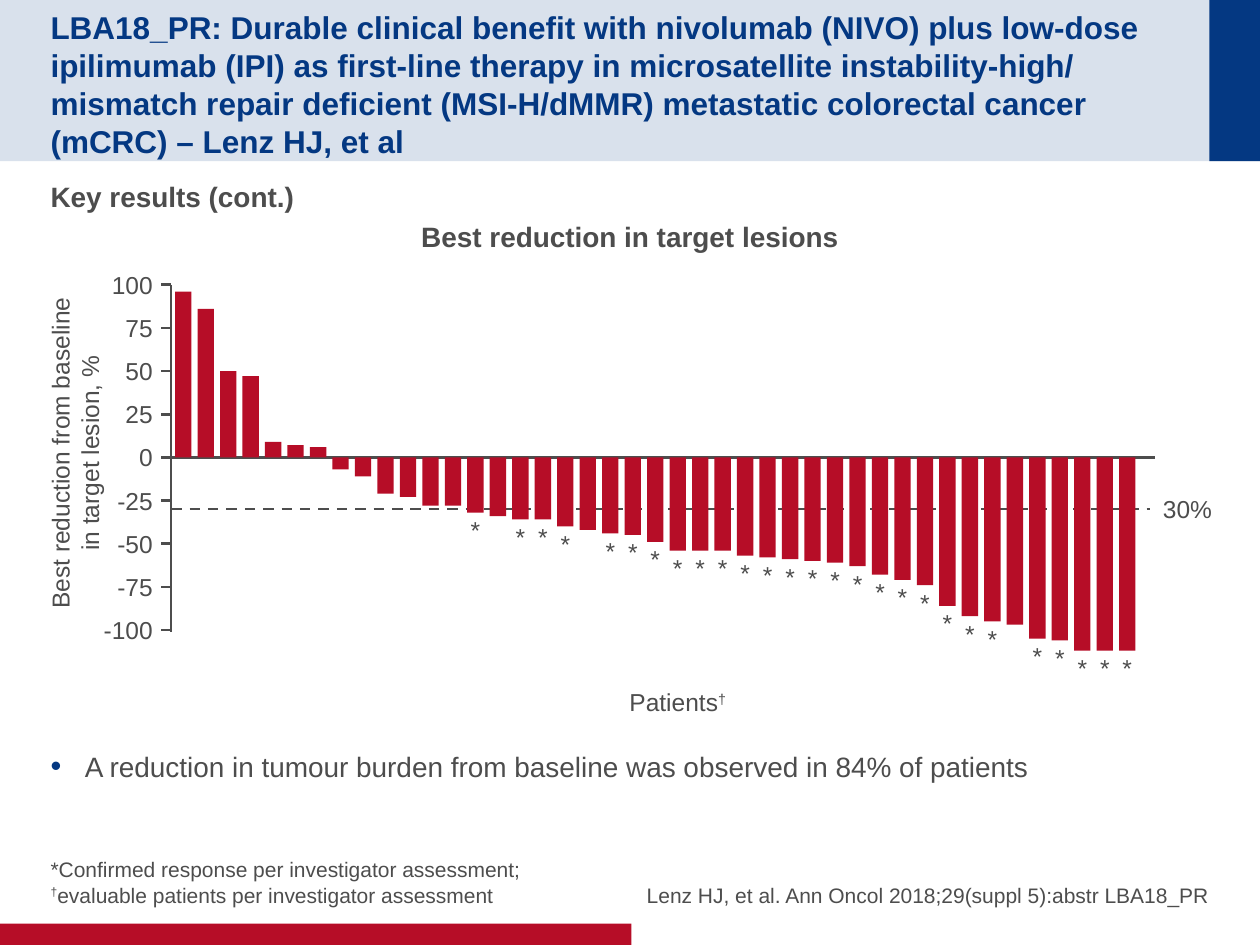
from lxml.etree import SubElement
from pptx import Presentation
from pptx.dml.color import RGBColor
from pptx.enum.dml import MSO_LINE
from pptx.enum.shapes import MSO_CONNECTOR, MSO_SHAPE
from pptx.enum.text import MSO_ANCHOR, PP_ALIGN
from pptx.oxml.ns import qn
from pptx.util import Cm, Pt

NAVY, RED, GREY = "043882", "B60D27", "4D4D4D"

ZERO_Y = 9.22           # height of the zero line
CM_PER_PERCENT = 0.0348
AXIS_X, TICK_LENGTH = 3.45, 0.2
FIRST_BAR_X, LAST_BAR_X, BAR_WIDTH = 3.53, 22.56, 0.33
LABEL_HEIGHT, STAR_WIDTH = 0.86, 0.71

CHANGES = [
    96, 86, 50, 47, 9, 7, 6, -7, -11, -21, -23, -28, -28, -32, -34,
    -36, -36, -40, -42, -44, -45, -49, -54, -54, -54, -57, -58, -59, -60,
    -61, -63, -68, -71, -74, -86, -92, -95, -97, -105, -106, -112, -112, -112,
]
FIRST_CONFIRMED, UNCONFIRMED = 13, {14, 18, 37}


def color(code):
    return RGBColor.from_string(code)


def level(percent):
    """Vertical position of a percentage on the chart."""
    return ZERO_Y - percent * CM_PER_PERCENT


class SlideBuilder:
    font = "Arial"

    def __init__(self, page):
        self.page = page

    def rect(self, left, top, width, height, fill, opacity=None, shapes=None):
        shapes = shapes or self.page.shapes
        shape = shapes.add_shape(
            MSO_SHAPE.RECTANGLE, Cm(left), Cm(top), Cm(width), Cm(height))
        shape.shadow.inherit = False
        shape.fill.solid()
        shape.fill.fore_color.rgb = color(fill)
        shape.line.fill.background()
        if opacity:
            tint = shape.fill._xPr.find(".//" + qn("a:srgbClr"))
            SubElement(tint, qn("a:alpha"), val=str(opacity * 1000))

    def line(self, x1, y1, x2, y2, dash=None):
        line = self.page.shapes.add_connector(
            MSO_CONNECTOR.STRAIGHT, Cm(x1), Cm(y1), Cm(x2), Cm(y2))
        line.line.color.rgb = color(GREY)
        line.line.width = Pt(1.5)
        if dash:
            line.line.dash_style = dash
        SubElement(line._element.spPr, qn("a:effectLst"))

    def text(self, left, top, width, height, content, size=14, bold=False,
             ink=GREY, align=PP_ALIGN.LEFT, anchor=MSO_ANCHOR.TOP,
             inset_top=0.13, inset_right=0, rotation=0):
        box = self.page.shapes.add_textbox(
            Cm(left), Cm(top), Cm(width), Cm(height))
        box.rotation = rotation
        frame = box.text_frame
        frame.word_wrap = True
        frame.vertical_anchor = anchor
        frame.margin_left = frame.margin_bottom = 0
        frame.margin_top, frame.margin_right = Cm(inset_top), Cm(inset_right)
        frame.text = content
        for para in frame.paragraphs:
            para.alignment = align
            self.raise_daggers(para)
            for span in para.runs:
                span.font.name = self.font
                span.font.size = Pt(size)
                span.font.bold = bold
                span.font.color.rgb = color(ink)
        return frame

    def raise_daggers(self, para):
        """Put each dagger in a superscript run of its own."""
        before, dagger, after = para.text.partition("†")
        if not dagger:
            return
        para.text = before
        for part in filter(None, (dagger, after)):
            span = para.add_run()
            span.text = part
            if part == dagger:
                span._r.get_or_add_rPr().set("baseline", "30000")

    def bullet(self, left, top, width, height, content, size):
        frame = self.text(left, top, width, height, content, size)
        props = frame.paragraphs[0]._p.get_or_add_pPr()
        props.set("marL", str(Cm(0.69)))
        props.set("indent", str(-Cm(0.69)))
        mark = SubElement(props, qn("a:buClr"))
        SubElement(mark, qn("a:srgbClr"), val=NAVY)
        SubElement(props, qn("a:buSzPct"), val="110000")
        SubElement(props, qn("a:buFont"), typeface=self.font)
        SubElement(props, qn("a:buChar"), char="•")


def add_frame(slide):
    slide.rect(0, 0, 25.4, 3.25, NAVY, opacity=15)
    slide.rect(24.38, 0, 1.02, 3.25, NAVY)
    slide.rect(0, 18.62, 12.73, 0.43, RED)
    slide.text(
        1.02, 0.51, 22.89, 2.24,
        "LBA18_PR: Durable clinical benefit with nivolumab (NIVO) plus "
        "low-dose ipilimumab (IPI) as first-line therapy in microsatellite "
        "instability-high/ mismatch repair deficient (MSI-H/dMMR) metastatic "
        "colorectal cancer (mCRC) – Lenz HJ, et al",
        size=18, bold=True, ink=NAVY, anchor=MSO_ANCHOR.MIDDLE)
    slide.text(1.02, 3.48, 23.37, 0.9, "Key results (cont.)", 16, bold=True)
    slide.bullet(
        1.02, 14.98, 23.37, 0.9,
        "A reduction in tumour burden from baseline was observed in 84% of "
        "patients", 16)
    footer = {"size": 12, "anchor": MSO_ANCHOR.BOTTOM, "inset_top": 0}
    slide.text(
        1.02, 16.94, 11.48, 1.35,
        "*Confirmed response per investigator assessment;\n"
        "†evaluable patients per investigator assessment", **footer)
    slide.text(
        12.9, 16.94, 11.48, 1.35,
        "Lenz HJ, et al. Ann Oncol 2018;29(suppl 5):abstr LBA18_PR",
        align=PP_ALIGN.RIGHT, **footer)


def add_axes(slide):
    center = PP_ALIGN.CENTER
    slide.text(8.18, 4.29, 9.04, 0.94, "Best reduction in target lesions",
               16, bold=True, align=center)
    slide.text(-1.9, 8.41, 6.81, 1.45,
               "Best reduction from baseline\nin target lesion, %",
               align=center, rotation=270)
    slide.text(12.37, 13.72, 2.59, LABEL_HEIGHT, "Patients†", align=center)
    for percent in range(100, -101, -25):
        y = level(percent)
        slide.line(AXIS_X - TICK_LENGTH, y, AXIS_X, y)
        slide.text(1.83, y - LABEL_HEIGHT / 2, 1.5, LABEL_HEIGHT, str(percent),
                   align=PP_ALIGN.RIGHT, inset_right=0.25)
    slide.line(AXIS_X, level(-101), AXIS_X, level(100))
    slide.line(AXIS_X, ZERO_Y, 23.29, ZERO_Y)
    slide.line(AXIS_X, level(-30), 23.19, level(-30), MSO_LINE.DASH)
    slide.text(23.19, level(-30) - LABEL_HEIGHT / 2, 1.5, LABEL_HEIGHT, "30%",
               align=center)


def add_bars(slide):
    pitch = (LAST_BAR_X - FIRST_BAR_X) / (len(CHANGES) - 1)
    bars = slide.page.shapes.add_group_shape().shapes
    for index, change in enumerate(CHANGES):
        x = FIRST_BAR_X + index * pitch
        slide.rect(x, level(max(change, 0)), BAR_WIDTH,
                   abs(change) * CM_PER_PERCENT, RED, shapes=bars)
        if index >= FIRST_CONFIRMED and index not in UNCONFIRMED:
            slide.text(x + (BAR_WIDTH - STAR_WIDTH) / 2, level(change) - 0.08,
                       STAR_WIDTH, LABEL_HEIGHT, "*", align=PP_ALIGN.CENTER)


def main():
    deck = Presentation()
    deck.slide_width, deck.slide_height = Cm(25.4), Cm(19.05)
    slide = SlideBuilder(deck.slides.add_slide(deck.slide_layouts[6]))
    add_frame(slide)
    add_axes(slide)
    add_bars(slide)
    deck.save("out.pptx")


if __name__ == "__main__":
    main()
